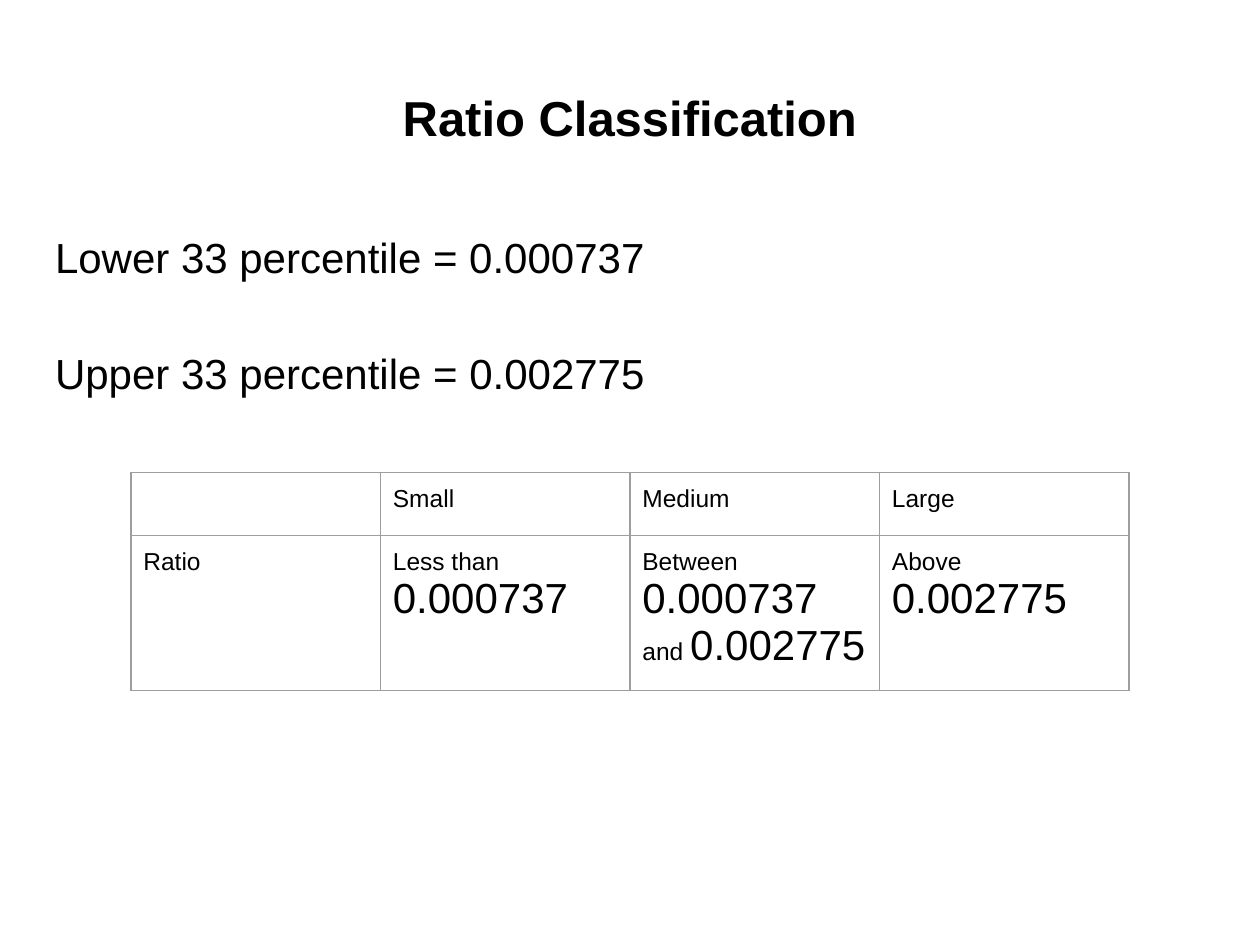
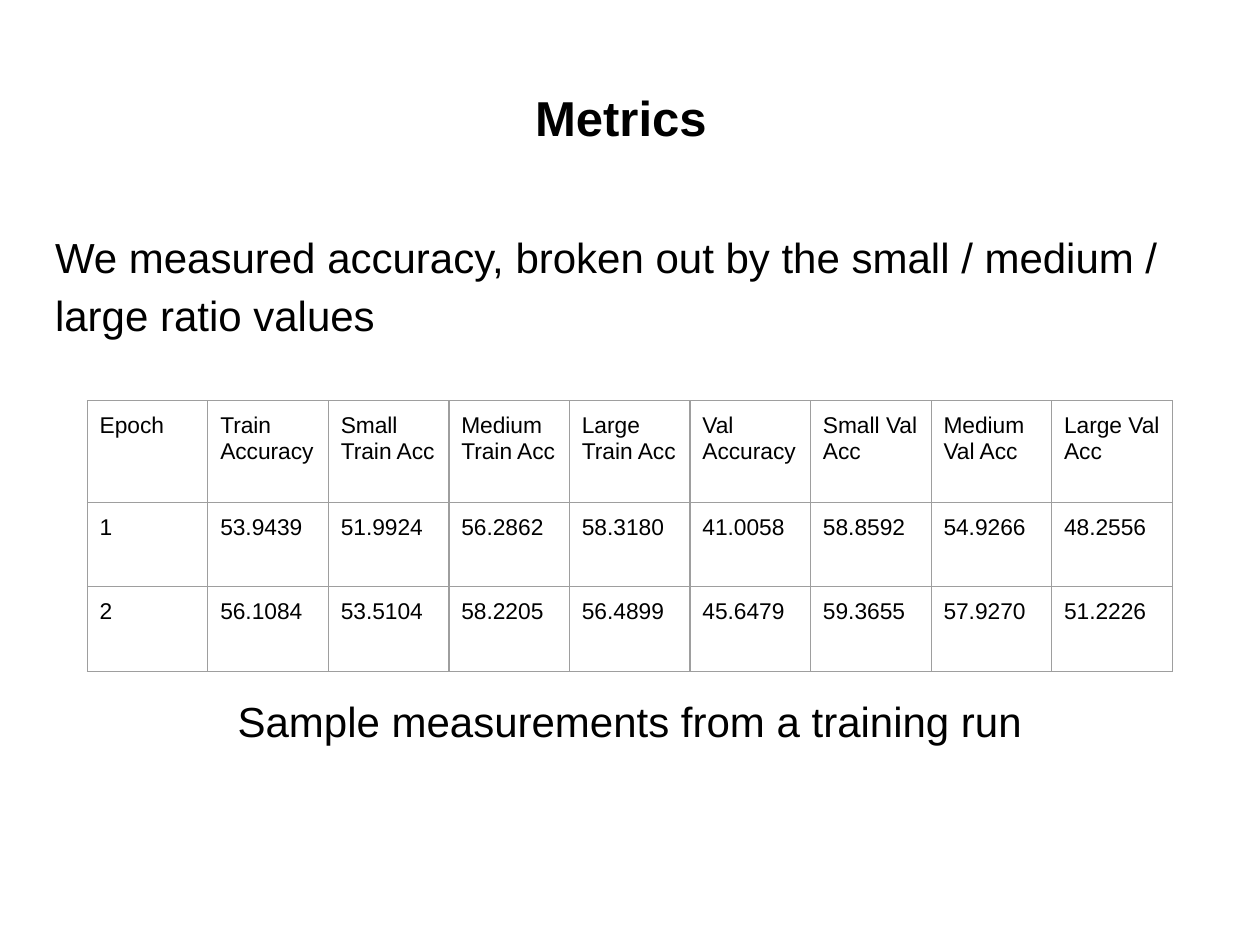
from lxml import etree
from pptx import Presentation
from pptx.dml.color import RGBColor
from pptx.enum.text import MSO_ANCHOR, PP_ALIGN
from pptx.oxml.ns import qn
from pptx.util import Cm, Pt

LEFT, CENTER = PP_ALIGN.LEFT, PP_ALIGN.CENTER
TOP = MSO_ANCHOR.TOP
FONT = "Arial"
BLACK, GRID = "000000", "9E9E9E"
BODY_SIZE = 24
BODY_LINE = 33.14
INSET = 0.25
TITLE_BOX = (0.86, 1.65, 23.67, 2.11)
BODY_BOX = (0.86, 4.27, 23.67, 12.65)


def rgb(value):
    return RGBColor.from_string(value)


def write(p, text, size=BODY_SIZE, bold=False, color=BLACK,
          align=LEFT, spacing=None, before=0):
    p.alignment = align
    if spacing:
        p.line_spacing = spacing
    if before:
        p.space_before = Pt(before)
    r = p.add_run()
    r.text = text
    r.font.name = FONT
    r.font.size = Pt(size)
    r.font.bold = bold
    r.font.color.rgb = rgb(color)


def set_insets(target):
    target.margin_left = target.margin_right = Cm(INSET)
    target.margin_top = target.margin_bottom = Cm(INSET)


def add_box(s, box):
    tf = s.shapes.add_textbox(*map(Cm, box)).text_frame
    tf.word_wrap = True
    tf.vertical_anchor = TOP
    set_insets(tf)
    return tf


def add_title(s, text):
    tf = add_box(s, TITLE_BOX)
    write(tf.paragraphs[0], text, size=28, bold=True, align=CENTER, spacing=0.9)


def add_body(s, first, second, blank_lines, align=LEFT):
    tf = add_box(s, BODY_BOX)
    write(tf.paragraphs[0], first, spacing=1.15)
    write(tf.add_paragraph(), second, spacing=1.15, align=align,
          before=blank_lines * BODY_LINE)


def set_borders(cell, color=GRID, width=0.75):
    tc_pr = cell._tc.get_or_add_tcPr()
    for side in ("lnL", "lnR", "lnT", "lnB"):
        ln = etree.SubElement(tc_pr, qn(f"a:{side}"), w=str(Pt(width)))
        fill = etree.SubElement(ln, qn("a:solidFill"))
        etree.SubElement(fill, qn("a:srgbClr"), val=color)


def add_grid(s, left, top, col_width, row_heights, rows, size):
    n_cols = len(rows[0])
    frame = s.shapes.add_table(len(rows), n_cols, Cm(left), Cm(top),
                               Cm(col_width * n_cols), Cm(sum(row_heights)))
    table = frame.table
    table.first_row = table.horz_banding = False
    for col in table.columns:
        col.width = Cm(col_width)
    for row, height, values in zip(table.rows, row_heights, rows):
        row.height = Cm(height)
        for cell, value in zip(row.cells, values):
            set_insets(cell)
            set_borders(cell)
            cell.fill.background()
            runs = [(value, size)] if isinstance(value, str) else value
            for text, run_size in runs:
                if text:
                    write(cell.text_frame.paragraphs[0], text, size=run_size)


def ratio_slide(prs):
    s = prs.slides.add_slide(prs.slide_layouts[6])
    lower, upper = "0.000737", "0.002775"
    label = 14
    add_title(s, "Ratio Classification")
    add_body(s, f"Lower 33 percentile = {lower}",
             f"Upper 33 percentile = {upper}", blank_lines=1)
    add_grid(s, 2.64, 9.53, 5.03, (1.07, 1.07), [
        ("", "Small", "Medium", "Large"),
        ("Ratio",
         [("Less than ", label), (lower, BODY_SIZE)],
         [("Between ", label), (f"{lower} ", BODY_SIZE),
          ("and ", label), (upper, BODY_SIZE)],
         [("Above ", label), (upper, BODY_SIZE)]),
    ], size=label)


def metrics_slide(prs):
    s = prs.slides.add_slide(prs.slide_layouts[6])
    add_title(s, "Metrics\t")
    add_body(s, "We measured accuracy, broken out by the small / medium / "
                "large ratio values",
             "Sample measurements from a training run",
             blank_lines=6, align=CENTER)
    add_grid(s, 1.76, 8.08, 2.43, (2.05, 1.7, 1.7), [
        ("Epoch", "Train Accuracy", "Small Train Acc", "Medium Train Acc",
         "Large Train Acc", "Val Accuracy", "Small Val Acc",
         "Medium Val Acc", "Large Val Acc"),
        ("1", "53.9439", "51.9924", "56.2862", "58.3180", "41.0058",
         "58.8592", "54.9266", "48.2556"),
        ("2", "56.1084", "53.5104", "58.2205", "56.4899", "45.6479",
         "59.3655", "57.9270", "51.2226"),
    ], size=13)


def main():
    prs = Presentation()
    prs.slide_width, prs.slide_height = Cm(25.4), Cm(19.05)
    ratio_slide(prs)
    metrics_slide(prs)
    prs.save("out.pptx")


if __name__ == "__main__":
    main()
